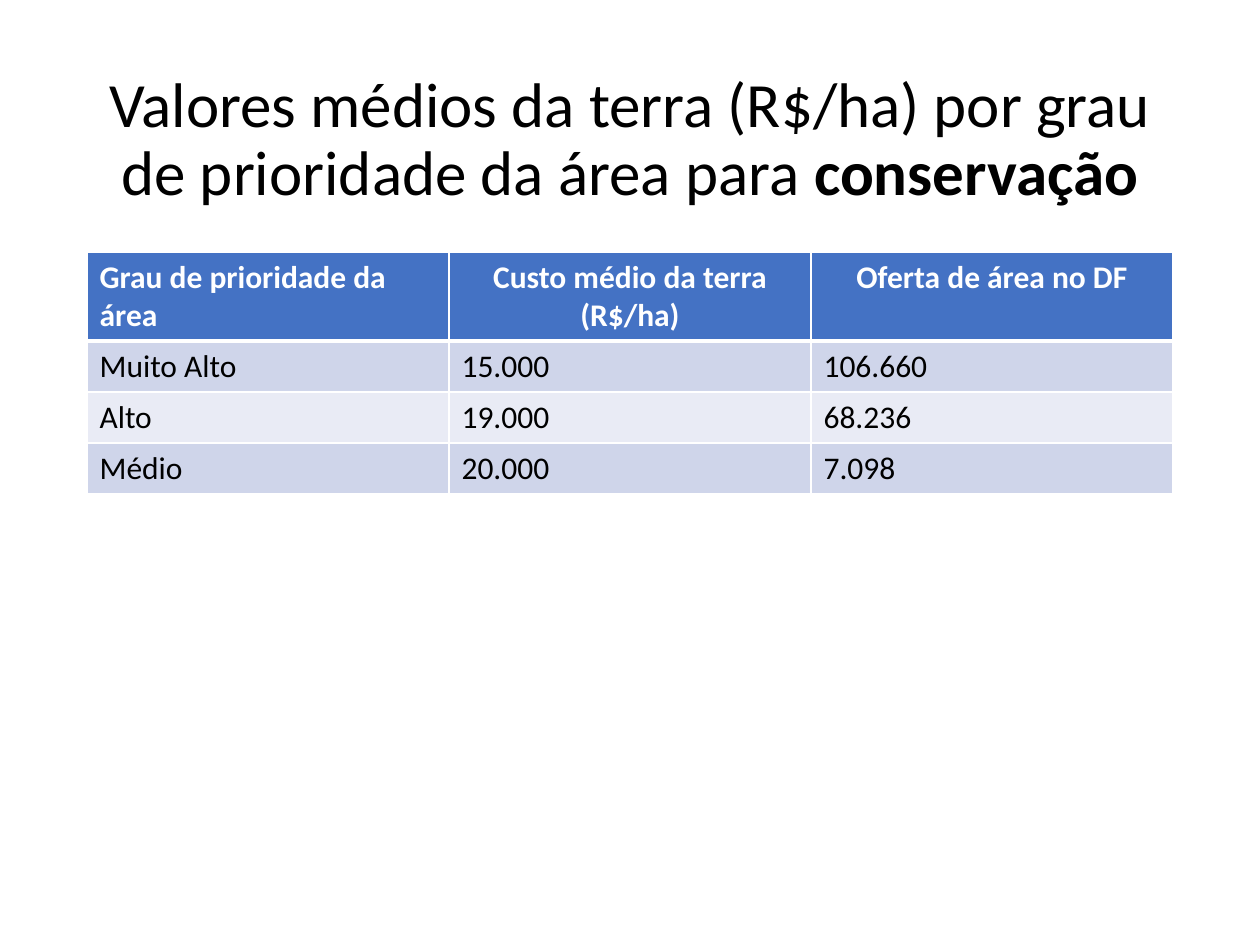
import pptx
import pptx.util
import pptx.dml.color
import pptx.enum.text
import pptx.oxml
import pptx.oxml.ns

PX = 914400 // 126
FONT = "Calibri"
BLACK = pptx.dml.color.RGBColor(0x00, 0x00, 0x00)
WHITE = pptx.dml.color.RGBColor(0xFF, 0xFF, 0xFF)
HEADER_BLUE = pptx.dml.color.RGBColor(0x44, 0x72, 0xC4)
BAND_DARK = pptx.dml.color.RGBColor(0xCF, 0xD5, 0xEA)
BAND_LIGHT = pptx.dml.color.RGBColor(0xE9, 0xEB, 0xF5)
CENTER = pptx.enum.text.PP_ALIGN.CENTER
LEFT = pptx.enum.text.PP_ALIGN.LEFT


def format_run(r, size, color, bold):
    r.font.name = FONT
    r.font.size = pptx.util.Pt(size)
    r.font.color.rgb = color
    r.font.bold = bold


def set_border(cell, side, width):
    """Add a solid white border; side is L, R, T or B and width is in points."""
    cell._tc.get_or_add_tcPr().append(pptx.oxml.parse_xml(
        f'<a:ln{side} {pptx.oxml.ns.nsdecls("a")} w="{pptx.util.Pt(width)}">'
        f'<a:solidFill><a:srgbClr val="{WHITE}"/></a:solidFill></a:ln{side}>'))


prs = pptx.Presentation()
prs.slide_width = pptx.util.Inches(10)
prs.slide_height = pptx.util.Inches(7.5)
s = prs.slides.add_slide(prs.slide_layouts[6])

# Title
sp = s.shapes.add_textbox(87 * PX, 50 * PX, 1086 * PX, 183 * PX)
tf = sp.text_frame
tf.word_wrap = True
tf.vertical_anchor = pptx.enum.text.MSO_ANCHOR.MIDDLE
p = tf.paragraphs[0]
p.alignment = CENTER
p.line_spacing = 0.9
for text, bold in [
    ("Valores médios da terra (R$/ha) por grau de prioridade da área para ", False),
    ("conservação", True),
]:
    r = p.add_run()
    r.text = text
    format_run(r, 36, BLACK, bold)

# Land value table
rows = [
    ("Grau de prioridade da área", "Custo médio da terra (R$/ha)", "Oferta de área no DF"),
    ("Muito Alto", "15.000", "106.660"),
    ("Alto", "19.000", "68.236"),
    ("Médio", "20.000", "7.098"),
]
heights = [89, 51, 51, 51]
table = s.shapes.add_table(
    len(rows), 3, 87 * PX, 252 * PX, 1086 * PX, sum(heights) * PX).table
for col in table.columns:
    col.width = 362 * PX

for i, row in enumerate(rows):
    table.rows[i].height = heights[i] * PX
    header = i == 0
    fill = HEADER_BLUE if header else BAND_DARK if i % 2 else BAND_LIGHT
    for j, text in enumerate(row):
        cell = table.cell(i, j)
        for side in "LRTB":
            thick = (header and side == "B") or (i == 1 and side == "T")
            set_border(cell, side, 3 if thick else 1)
        cell.fill.solid()
        cell.fill.fore_color.rgb = fill
        p = cell.text_frame.paragraphs[0]
        p.text = text
        p.alignment = CENTER if header and j else LEFT
        format_run(p.runs[0], 18, WHITE if header else BLACK, header)

prs.save("out.pptx")
